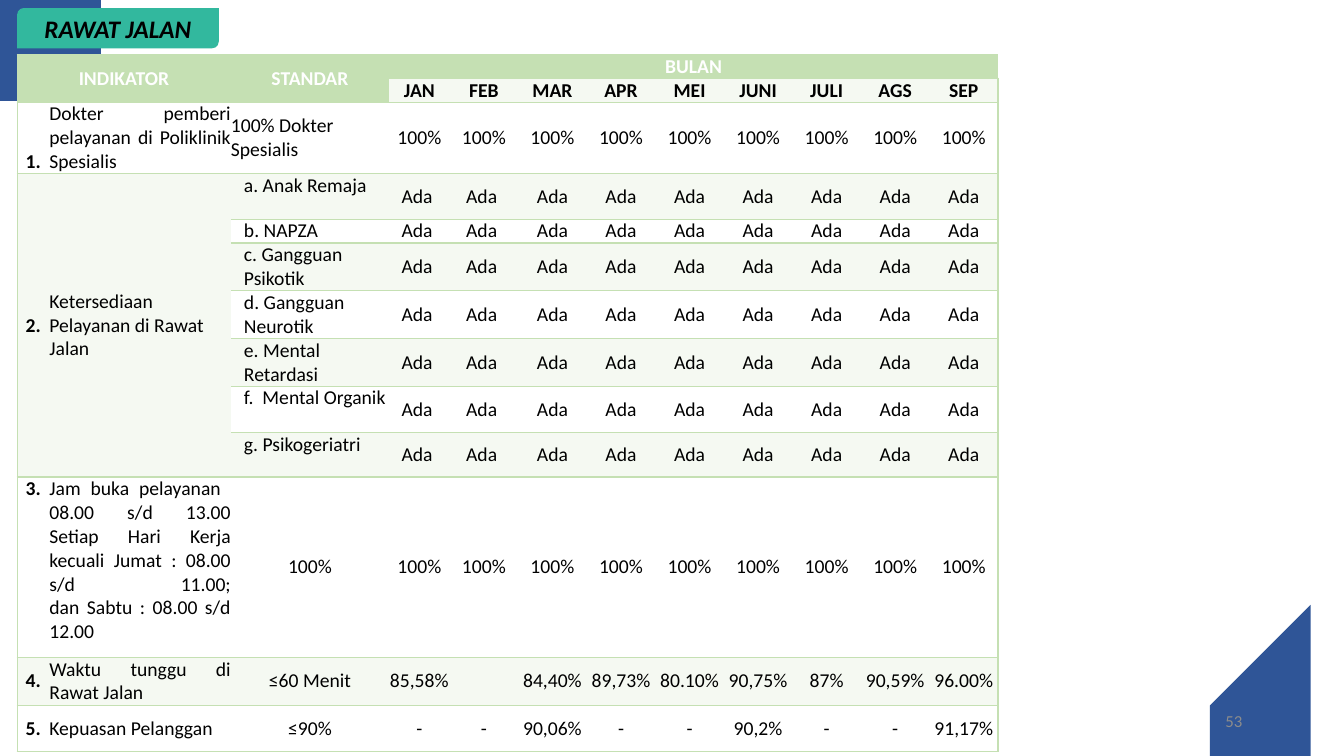
import lxml.etree
import pptx
import pptx.dml.color
import pptx.enum.shapes
import pptx.enum.text
import pptx.oxml.ns
import pptx.util

COLOURS = {"navy": "2F5597", "teal": "32B89E", "header": "C5E0B3", "band": "F5F9F2",
           "white": "FFFFFF", "black": "000000", "grey": "8C8C8C"}
ALIGN = pptx.enum.text.PP_ALIGN
ANCHOR = pptx.enum.text.MSO_ANCHOR
FONT = "Calibri"

COLUMNS = [0.32, 1.8, 1.57, 0.6] + [0.68] * 8
ROWS = [0.12, 0.23, 0.68, 0.45, 0.23, 0.46, 0.46, 0.46, 0.46, 0.44, 1.79, 0.46, 0.46]
MONTHS = ["JAN", "FEB", "MAR", "APR", "MEI", "JUNI", "JULI", "AGS", "SEP"]
SERVICES = ["a. Anak Remaja", "b. NAPZA", "c. Gangguan Psikotik", "d. Gangguan Neurotik",
            "e. Mental Retardasi", "f.  Mental Organik", "g. Psikogeriatri"]
HOURS = ("Jam buka pelayanan \n08.00 s/d 13.00\nSetiap Hari Kerja kecuali Jumat : "
         "08.00 s/d 11.00;\ndan Sabtu : 08.00 s/d 12.00")
FULL = ["100%"] * 9
AVAILABLE = ["Ada "] * 2 + ["Ada"] * 7
WAITING = ["85,58%", "", "84,40%", "89,73%", "80.10%", "90,75%", "87%", "90,59%", "96.00%"]
SATISFACTION = ["-", "-", "90,06%", "-", "-", "90,2%", "-", "-", "91,17%"]
TABLE = [
    ["INDIKATOR", "", "STANDAR", "BULAN"] + [""] * 8,
    ["", "", ""] + MONTHS,
    ["1.", "Dokter pemberi pelayanan di Poliklinik Spesialis ", "100% Dokter Spesialis"] + FULL,
    ["2.", "Ketersediaan Pelayanan di Rawat Jalan", SERVICES[0]] + AVAILABLE,
    *[["", "", service] + AVAILABLE for service in SERVICES[1:]],
    ["3.", HOURS, "100%"] + FULL,
    ["4.", "Waktu tunggu di Rawat Jalan ", "≤60 Menit"] + WAITING,
    ["5.", "Kepuasan Pelanggan", "≤90%"] + SATISFACTION,
]
MERGES = [(0, 0, 1, 1), (0, 2, 1, 2), (0, 3, 0, 11), (3, 0, 9, 0), (3, 1, 9, 1)]
FIRST_SERVICE, LAST_SERVICE, HOURS_ROW = 3, 9, 10


def rgb(name):
    """Return the named palette colour."""
    return pptx.dml.color.RGBColor.from_string(COLOURS[name])


def write(para, text, size, colour, align, bold=False, italic=False):
    """Fill a paragraph with text in one style."""
    para.text = text
    para.alignment = align
    for span in para.runs:
        span.font.name = FONT
        span.font.size = pptx.util.Pt(size)
        span.font.bold = bold
        span.font.italic = italic
        span.font.color.rgb = rgb(colour)
    for line_break in para._p.findall(pptx.oxml.ns.qn("a:br")):
        style = lxml.etree.SubElement(line_break, pptx.oxml.ns.qn("a:rPr"))
        style.set("sz", str(size * 100))


def set_borders(cell, visible):
    """Draw the visible sides of a cell and hide the others."""
    properties = cell._tc.get_or_add_tcPr()
    for place, side in enumerate("LRTB"):
        line = lxml.etree.Element(pptx.oxml.ns.qn("a:ln" + side), w="12700")
        if side in visible:
            fill = lxml.etree.SubElement(line, pptx.oxml.ns.qn("a:solidFill"))
            lxml.etree.SubElement(fill, pptx.oxml.ns.qn("a:srgbClr"), val=COLOURS["header"])
        else:
            lxml.etree.SubElement(line, pptx.oxml.ns.qn("a:noFill"))
        properties.insert(place, line)


def curve(start, first, second, end, steps=24):
    """Return points along a cubic curve."""
    return [tuple((1 - t) ** 3 * a + 3 * (1 - t) ** 2 * t * b + 3 * (1 - t) * t * t * c + t ** 3 * d
                  for a, b, c, d in zip(start, first, second, end))
            for t in (step / steps for step in range(steps + 1))]


def add_corner(page, points):
    """Add a navy corner outlined by points in inches."""
    builder = page.shapes.build_freeform(*points[0], scale=pptx.util.Inches(1))
    builder.add_line_segments(points[1:], close=True)
    corner = builder.convert_to_shape()
    corner.shadow.inherit = False
    corner.fill.solid()
    corner.fill.fore_color.rgb = rgb("navy")
    corner.line.fill.background()


def cell_style(row, column):
    """Return alignment, anchor, fill, text colour and boldness of a cell."""
    service = column == 2 and FIRST_SERVICE <= row <= LAST_SERVICE
    align, anchor = ALIGN.CENTER, ANCHOR.MIDDLE
    if service or (row, column) in [(2, 2), (3, 1)]:
        align = ALIGN.LEFT
    elif column == 1 and row > 1:
        align = ALIGN.JUSTIFY
    if service or (row == HOURS_ROW and column < 2):
        anchor = ANCHOR.TOP
    elif (row, column) == (2, 0):
        anchor = ANCHOR.BOTTOM
    heading = row == 0 or (row == 1 and column < 3)
    merged_band = column < 2 and FIRST_SERVICE <= row <= LAST_SERVICE
    fill = "header" if heading else "band" if row % 2 or merged_band else "white"
    return align, anchor, fill, "white" if heading else "black", row < 2 or column == 0


def add_indicators(page, box):
    """Add the indicator table at the given box."""
    frame = page.shapes.add_table(len(ROWS), len(COLUMNS), *map(pptx.util.Inches, box))
    table = frame.table
    table.first_row = table.horz_banding = False
    for column, width in zip(table.columns, COLUMNS):
        column.width = pptx.util.Inches(width)
    for row, height in zip(table.rows, ROWS):
        row.height = pptx.util.Inches(height)
    for row, texts in enumerate(TABLE):
        for column, text in enumerate(texts):
            cell = table.cell(row, column)
            align, anchor, fill, colour, bold = cell_style(row, column)
            cell.margin_left = cell.margin_right = cell.margin_top = cell.margin_bottom = 0
            cell.vertical_anchor = anchor
            cell.fill.solid()
            cell.fill.fore_color.rgb = rgb(fill)
            para = cell.text_frame.paragraphs[0]
            write(para, text, 14, colour, align, bold)
            if text in SERVICES:
                para._p.get_or_add_pPr().set("marL", str(pptx.util.Inches(0.13)))
            set_borders(cell, "TB" + "L" * (column == 0) + "R" * (column == len(COLUMNS) - 1))
    for top, left, bottom, right in MERGES:
        table.cell(top, left).merge(table.cell(bottom, right))


def add_title(page, box):
    """Add the teal title tab at the given box."""
    kind = pptx.enum.shapes.MSO_SHAPE.ROUND_2_DIAG_RECTANGLE
    tab = page.shapes.add_shape(kind, *map(pptx.util.Inches, box))
    tab.shadow.inherit = False
    tab.fill.solid()
    tab.fill.fore_color.rgb = rgb("teal")
    tab.line.fill.background()
    tab.text_frame.vertical_anchor = ANCHOR.MIDDLE
    write(tab.text_frame.paragraphs[0], "RAWAT JALAN", 18, "black", ALIGN.CENTER, True, True)


def add_page_number(page, box):
    """Add the page number at the given box."""
    label = page.shapes.add_textbox(*map(pptx.util.Inches, box))
    label.text_frame.word_wrap = True
    label.text_frame.vertical_anchor = ANCHOR.MIDDLE
    write(label.text_frame.paragraphs[0], "53", 12, "grey", ALIGN.RIGHT)


def main():
    """Build and save the slide."""
    deck = pptx.Presentation()
    deck.slide_width, deck.slide_height = pptx.util.Inches(13.33), pptx.util.Inches(7.5)
    page = deck.slides.add_slide(deck.slide_layouts[6])
    add_corner(page, [(13.33, 7.5), (12.11, 7.5)]
               + curve((12.04, 7.36), (11.9, 7.06), (12.03, 6.69), (12.34, 6.55))
               + [(13.33, 6.09)])
    add_corner(page, [(0, 0), (1.22, 0)]
               + curve((1.29, 0.15), (1.43, 0.46), (1.29, 0.83), (0.99, 0.97))
               + [(0, 1.42)])
    add_indicators(page, (0.17, 0.54, sum(COLUMNS), sum(ROWS)))
    add_title(page, (0.17, 0.08, 2, 0.4))
    add_page_number(page, (9.42, 6.95, 3, 0.4))
    deck.save("out.pptx")


if __name__ == "__main__":
    main()
